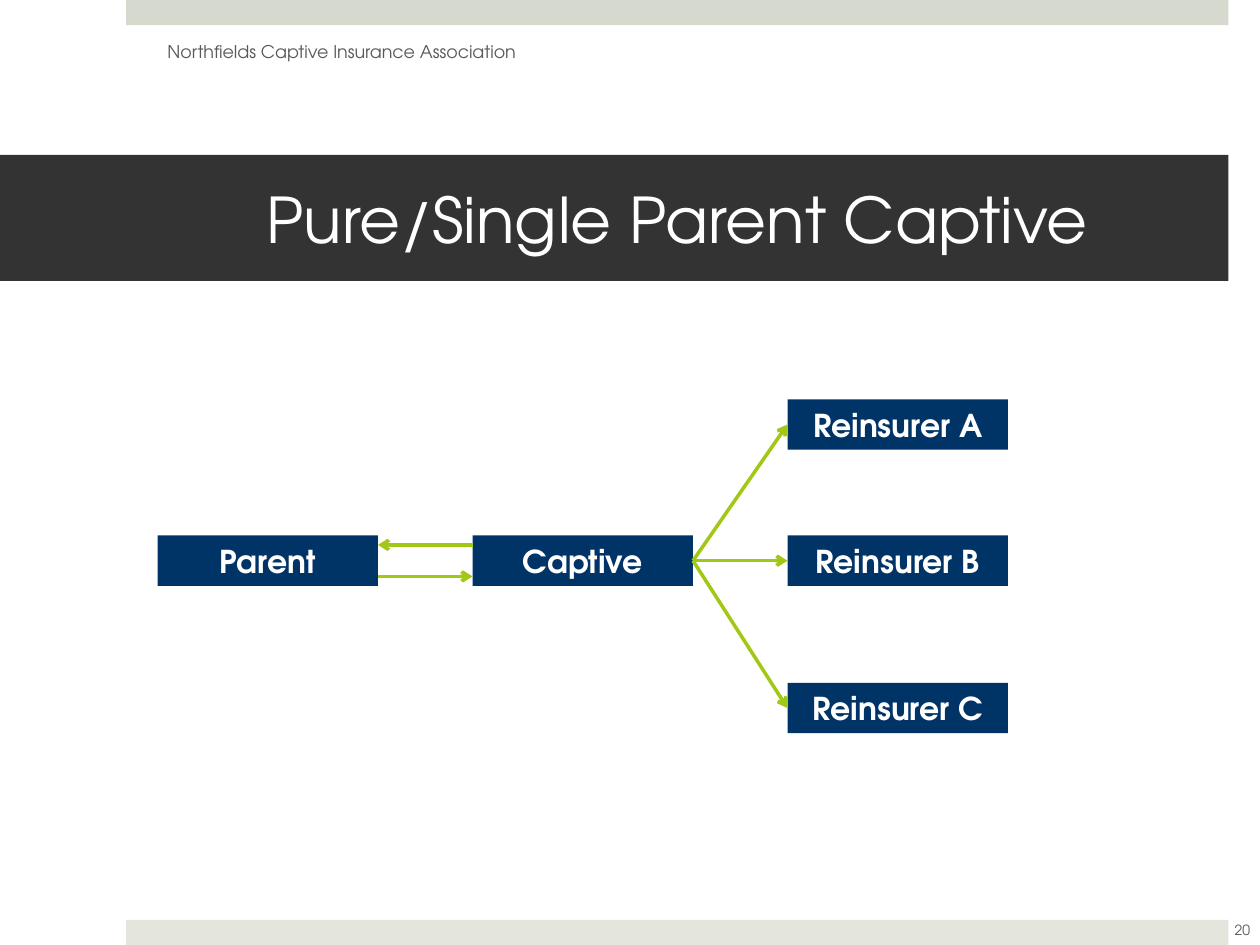
from lxml import etree
from pptx import Presentation
from pptx.dml.color import RGBColor
from pptx.enum.shapes import MSO_CONNECTOR, MSO_SHAPE
from pptx.enum.text import MSO_ANCHOR, PP_ALIGN
from pptx.oxml.ns import qn
from pptx.util import Inches, Pt

RECTANGLE, STRAIGHT = MSO_SHAPE.RECTANGLE, MSO_CONNECTOR.STRAIGHT
MIDDLE, LEFT, CENTER = MSO_ANCHOR.MIDDLE, PP_ALIGN.LEFT, PP_ALIGN.CENTER

FONT = "TeX Gyre Adventor"
COLORS = {
    "top_band": "D6D9CD",
    "bottom_band": "E4E6DE",
    "title_band": "333333",
    "node": "003366",
    "arrow": "A2C816",
    "light_text": "FFFFFF",
    "small_text": "595959",
}

# Grid of quarter-inch cells: 40 columns by 30 rows
CELL = 0.25
COLUMNS, ROWS = 40, 30
NODE_WIDTH, NODE_HEIGHT = 7, 1.6
NODE_STEP = 10  # columns from one stage to the next


def cells(count):
    return Inches(count * CELL)


def color(key):
    return RGBColor.from_string(COLORS[key])


def add_band(slide, box, fill):
    band = slide.shapes.add_shape(RECTANGLE, *map(cells, box))
    band.shadow.inherit = False
    band.fill.solid()
    band.fill.fore_color.rgb = color(fill)
    band.line.fill.background()
    return band


def write(shape, text, size, font_color, align=CENTER, bold=False):
    frame = shape.text_frame
    frame.word_wrap = True
    frame.vertical_anchor = MIDDLE
    paragraph = frame.paragraphs[0]
    paragraph.alignment = align
    run = paragraph.add_run()
    run.text = text
    run.font.name = FONT
    run.font.size = Pt(size)
    run.font.bold = bold
    run.font.color.rgb = color(font_color)


def add_label(slide, box, text, size, align):
    label = slide.shapes.add_textbox(*map(cells, box))
    write(label, text, size, "small_text", align)


def add_arrow(slide, start, end):
    arrow = slide.shapes.add_connector(STRAIGHT, *map(cells, start + end))
    arrow.line.color.rgb = color("arrow")
    arrow.line.width = Pt(2)
    etree.SubElement(arrow.line._get_or_add_ln(), qn("a:tailEnd"), type="arrow")
    etree.SubElement(arrow._element.spPr, qn("a:effectLst"))


def add_frame(slide, box):
    """Page bands, header and page number."""
    left, top, width, height = box
    band_height = 0.8
    add_band(slide, (left, top, width, band_height), "top_band")
    add_band(slide, (left, top + height - band_height, width, band_height),
             "bottom_band")
    add_label(slide, (left + 0.92, top + 0.84, 12.68, 1.6),
              "Northfields Captive Insurance Association", 10, LEFT)
    add_label(slide, (left + width - 0.56, top + height - 1.28, 2, 1.6),
              "20", 8, CENTER)


def add_title(slide, box):
    title = add_band(slide, box, "title_band")
    title.text_frame.margin_left = Inches(1.3)
    title.text_frame.margin_right = Inches(0.3)
    write(title, "Pure/Single Parent Captive", 36, "light_text")


def add_captive_diagram(slide, box):
    """Parent and captive on the middle row, reinsurers spread over the height."""
    left, top, _, height = box
    middle = top + 4.32
    bottom = top + height - NODE_HEIGHT
    captive_left = left + NODE_STEP
    reinsurer_left = left + 2 * NODE_STEP
    reinsurers = {"Reinsurer A": top, "Reinsurer B": middle, "Reinsurer C": bottom}

    # Nodes
    nodes = [("Parent", left, middle), ("Captive", captive_left, middle)]
    nodes += [(name, reinsurer_left, row) for name, row in reinsurers.items()]
    for name, column, row in nodes:
        node = add_band(slide, (column, row, NODE_WIDTH, NODE_HEIGHT), "node")
        write(node, name, 18, "light_text", bold=True)

    # Captive to each reinsurer
    half = NODE_HEIGHT / 2
    for row in reinsurers.values():
        add_arrow(slide, (captive_left + NODE_WIDTH, middle + half),
                  (reinsurer_left, row + half))

    # Two-way flow between parent and captive
    parent_right = left + NODE_WIDTH
    outward, inward = middle + half + 0.5, middle + half - 0.5
    add_arrow(slide, (parent_right, outward), (captive_left, outward))
    add_arrow(slide, (captive_left, inward), (parent_right, inward))


def main():
    deck = Presentation()
    deck.slide_width, deck.slide_height = cells(COLUMNS), cells(ROWS)
    slide = deck.slides.add_slide(deck.slide_layouts[6])
    add_frame(slide, (4, 0, 35, ROWS))
    add_title(slide, (0, 4.92, 39, 4))
    add_captive_diagram(slide, (5, 12.68, 27, 10.6))
    deck.save("out.pptx")


if __name__ == "__main__":
    main()
